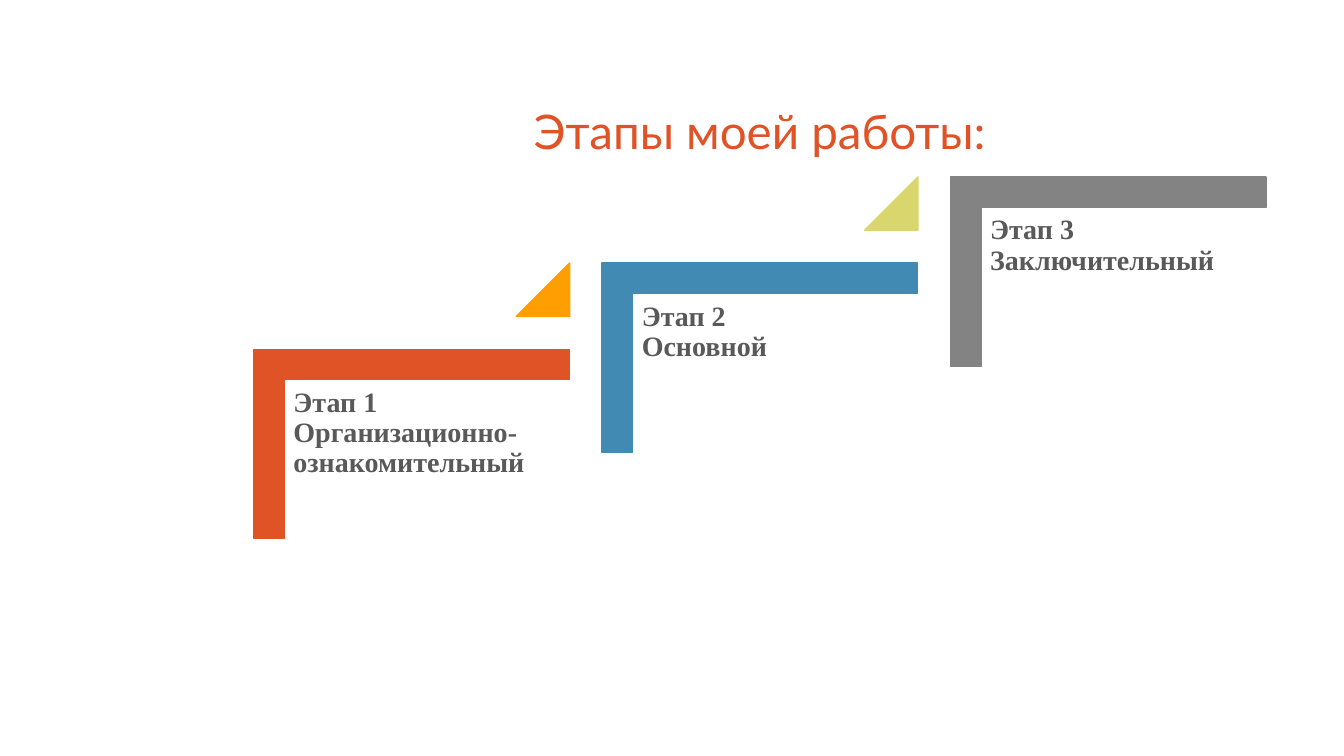
"""Build a slide with three work stages rising as a staircase."""
from pptx import Presentation
from pptx.dml.color import RGBColor
from pptx.enum.shapes import MSO_SHAPE as Shape
from pptx.enum.text import MSO_ANCHOR as Anchor, PP_ALIGN as Align
from pptx.util import Inches, Pt

TITLE = "Этапы моей работы:"
STAGES = [
    ("Этап 1", "Организационно- ознакомительный", "orange", "amber"),
    ("Этап 2", "Основной", "blue", "lime"),
    ("Этап 3", "Заключительный", "gray", None),
]
COLORS = {
    "orange": "DF5327",
    "amber": "FE9E00",
    "blue": "418AB3",
    "lime": "D9D66D",
    "gray": "838383",
    "text": "595959",
}
FIRST_LEFT, FIRST_TOP = 2.83, 3.77
STEP_RIGHT, STEP_UP = 3.455, 0.855
LABEL_WIDTH, LABEL_HEIGHT = 2.82, 2.47
CORNER_WIDTH, CORNER_HEIGHT = 1.88, 3.13
CORNER_THICKNESS = 0.161
TRIANGLE_SIZE = 0.53
INSET = 0.08


def color(name):
    return RGBColor.from_string(COLORS[name])


def box(left, top, width, height):
    return [Inches(value) for value in (left, top, width, height)]


def set_font(paragraph, name, size, color_name, bold=False):
    font = paragraph.font
    font.name, font.size, font.bold = name, Pt(size), bold
    font.color.rgb = color(color_name)
    paragraph.line_spacing = 0.9


def add_title(slide):
    title = slide.shapes.title
    title.left, title.top, title.width, title.height = box(2.41, 0.33, 10.25, 1.31)
    title.text_frame.text = TITLE
    title.text_frame.vertical_anchor = Anchor.BOTTOM
    paragraph = title.text_frame.paragraphs[0]
    paragraph.alignment = Align.CENTER
    set_font(paragraph, "Lato", 34, "orange")


def add_solid(slide, kind, place, color_name, adjustments):
    shape = slide.shapes.add_shape(kind, *box(*place))
    shape.shadow.inherit = False
    shape.fill.solid()
    shape.fill.fore_color.rgb = color(color_name)
    shape.line.color.rgb = color(color_name)
    shape.line.width = Pt(1)
    for index, value in enumerate(adjustments):
        shape.adjustments[index] = value
    return shape


def add_label(slide, left, top, heading, name):
    label = slide.shapes.add_textbox(*box(left, top, LABEL_WIDTH, LABEL_HEIGHT))
    frame = label.text_frame
    frame.word_wrap = True
    frame.margin_left = frame.margin_right = Inches(INSET)
    frame.margin_top = frame.margin_bottom = Inches(INSET)
    paragraph = frame.paragraphs[0]
    paragraph.text = f"{heading}\v{name}"
    set_font(paragraph, "Times New Roman", 20, "text", bold=True)


def add_stage(slide, index, heading, name, corner_color, triangle_color):
    left = FIRST_LEFT + index * STEP_RIGHT
    top = FIRST_TOP - index * STEP_UP
    corner_place = (left + 0.31, top - 0.93, CORNER_WIDTH, CORNER_HEIGHT)
    corner = add_solid(slide, Shape.CORNER, corner_place, corner_color,
                       [CORNER_THICKNESS] * 2)
    corner.rotation = 90
    add_label(slide, left, top, heading, name)
    if triangle_color:
        triangle_left = left + LABEL_WIDTH - TRIANGLE_SIZE
        triangle_place = (triangle_left, top - 1.16, TRIANGLE_SIZE, TRIANGLE_SIZE)
        add_solid(slide, Shape.ISOSCELES_TRIANGLE, triangle_place, triangle_color, [1])


def main():
    presentation = Presentation()
    presentation.slide_width = Inches(13.33)
    presentation.slide_height = Inches(7.5)
    slide = presentation.slides.add_slide(presentation.slide_layouts[5])
    add_title(slide)
    for index, stage in enumerate(STAGES):
        add_stage(slide, index, *stage)
    presentation.save("out.pptx")


if __name__ == "__main__":
    main()
